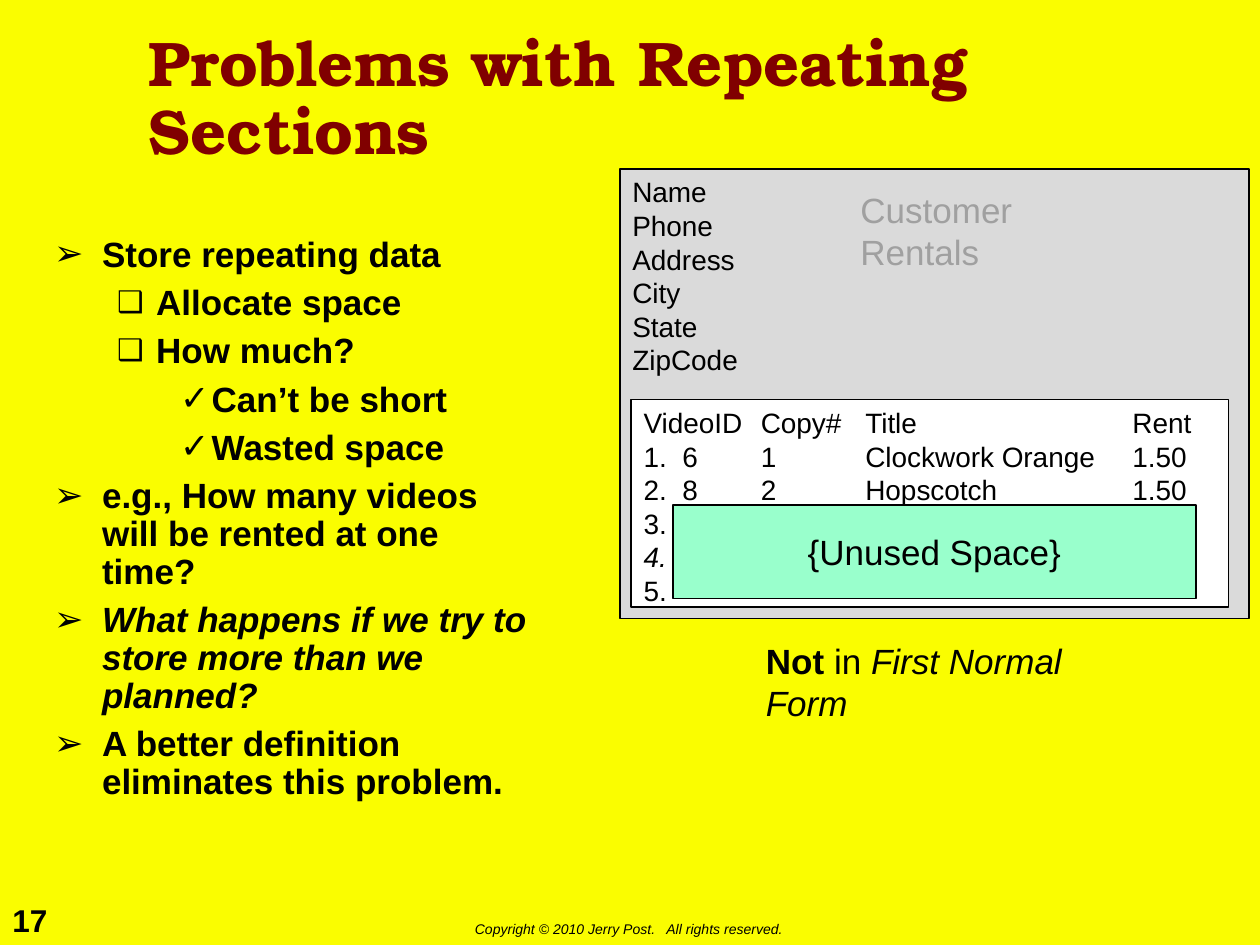
from lxml import etree
from pptx import Presentation
from pptx.dml.color import RGBColor
from pptx.enum.shapes import MSO_SHAPE
from pptx.enum.text import MSO_ANCHOR, MSO_AUTO_SIZE, PP_ALIGN
from pptx.oxml.ns import qn
from pptx.util import Inches, Pt

RECT = MSO_SHAPE.RECTANGLE
TOP, MIDDLE = MSO_ANCHOR.TOP, MSO_ANCHOR.MIDDLE
LEFT, CENTER = PP_ALIGN.LEFT, PP_ALIGN.CENTER
FIT, FIXED = MSO_AUTO_SIZE.SHAPE_TO_FIT_TEXT, MSO_AUTO_SIZE.NONE

TITLE = "Problems with Repeating Sections"
POINTS = [
    (0, "Store repeating data", False),
    (1, "Allocate space", False),
    (1, "How much?", False),
    (2, "Can’t be short", False),
    (2, "Wasted space", False),
    (0, "e.g., How many videos will be rented at one time?", False),
    (0, "What happens if we try to store more than we planned?", True),
    (0, "A better definition eliminates this problem.", False),
]
LEVELS = [("➢", 100, 0.38, 0.38), ("❑", 85, 0.81, 0.31), ("✓", 100, 1.25, 0.25)]
FIELDS = ["Name", "Phone", "Address", "City", "State", "ZipCode"]
RENTALS = [
    "VideoID\tCopy#\tTitle\tRent",
    "1.  6\t1\tClockwork Orange\t1.50",
    "2.  8\t2\tHopscotch\t1.50",
    "3.", "4.", "5.",
]
TABS = [0.93, 1.76, 3.88]
PANELS = [
    ((4.92, 1.34, 4.99, 3.57), "DADADA", FIELDS, 16, LEFT, TOP),
    ((5.01, 3.17, 4.74, 1.65), "FFFFFF", RENTALS, 16, LEFT, TOP),
    ((5.34, 4.01, 4.15, 0.74), "99FFCC", ["{Unused Space}"], 20, CENTER, MIDDLE),
]
LABELS = [
    ((0, 7.1, 0.5, 0.4), [("17", True, False)], 18, "000000", False),
    ((3.67, 7.26, 2.68, 0.24),
     [("Copyright © 2010 Jerry Post.   All rights reserved.", False, True)],
     8, "000000", False),
    ((5.98, 5.03, 3.25, 0.43),
     [("Not", True, False), (" in ", False, False), ("First Normal Form", False, True)],
     20, "000000", True),
    ((6.73, 1.45, 2.4, 0.43), [("Customer Rentals", False, False)], 20, "A0A0A0", True),
]


def color(code):
    """Turn a hex string into a colour."""
    return RGBColor.from_string(code)


def style(font, size, code="000000", bold=False, italic=False, name="Arial"):
    """Format one font."""
    font.name, font.size, font.bold, font.italic = name, Pt(size), bold, italic
    font.color.rgb = color(code)


def place(shape, box):
    """Move a placeholder to a box in inches."""
    shape.left, shape.top, shape.width, shape.height = map(Inches, box)


def add_tag(parent, tag, **attrs):
    """Append a drawing element and return it."""
    return etree.SubElement(parent, qn("a:" + tag), attrs)


def add_title(slide):
    """Fill the title placeholder."""
    shape = slide.shapes.title
    place(shape, (1.08, 0.17, 7.83, 1.25))
    frame = shape.text_frame
    frame.text = TITLE
    frame.auto_size, frame.vertical_anchor = FIXED, MIDDLE
    para = frame.paragraphs[0]
    para.alignment, para.line_spacing = LEFT, 0.9
    style(para.runs[0].font, 36, "800000", True, name="TeX Gyre Bonum")


def add_points(slide):
    """Fill the body placeholder with the bulleted list."""
    shape = slide.placeholders[1]
    place(shape, (0.33, 1.83, 3.98, 5.08))
    frame = shape.text_frame
    frame.text = "\n".join(text for _, text, _ in POINTS)
    frame.auto_size = FIXED
    for i, (para, (level, _, italic)) in enumerate(zip(frame.paragraphs, POINTS)):
        mark, scale, margin, hang = LEVELS[level]
        para.level = level
        props = para._p.get_or_add_pPr()
        props.set("marL", str(Inches(margin)))
        props.set("indent", str(-Inches(hang)))
        add_tag(add_tag(props, "buClr"), "srgbClr", val="000000")
        add_tag(props, "buSzPct", val=str(scale * 1000))
        add_tag(props, "buChar", char=mark)
        para.line_spacing, para.space_before = 0.9, Pt(6 if i else 0)
        style(para.runs[0].font, 20, bold=True, italic=italic)


def add_panel(slide, box, fill, lines, size, align, anchor):
    """Draw an outlined box with lines of text."""
    shape = slide.shapes.add_shape(RECT, *map(Inches, box))
    shape.shadow.inherit = False
    shape.fill.solid()
    shape.fill.fore_color.rgb = color(fill)
    shape.line.color.rgb, shape.line.width = color("000000"), Pt(1)
    frame = shape.text_frame
    frame.text = "\n".join(lines)
    frame.word_wrap, frame.vertical_anchor = False, anchor
    for para, line in zip(frame.paragraphs, lines):
        para.alignment = align
        if lines is RENTALS:
            stops = add_tag(para._p.get_or_add_pPr(), "tabLst")
            for pos in TABS:
                add_tag(stops, "tab", pos=str(Inches(pos)), algn="l")
        for run in para.runs:
            style(run.font, size, italic=line == "4.")


def add_label(slide, box, parts, size, code, wrap):
    """Add a text box made of formatted runs."""
    frame = slide.shapes.add_textbox(*map(Inches, box)).text_frame
    frame.word_wrap, frame.auto_size = wrap, FIT
    for text, bold, italic in parts:
        run = frame.paragraphs[0].add_run()
        run.text = text
        style(run.font, size, code, bold, italic)


def main():
    """Build and save the slide."""
    deck = Presentation()
    deck.slide_width, deck.slide_height = Inches(10), Inches(7.5)
    slide = deck.slides.add_slide(deck.slide_layouts[1])
    slide.background.fill.solid()
    slide.background.fill.fore_color.rgb = color("FAFD00")
    add_title(slide)
    add_points(slide)
    for panel in PANELS:
        add_panel(slide, *panel)
    for label in LABELS:
        add_label(slide, *label)
    deck.save("out.pptx")


if __name__ == "__main__":
    main()
